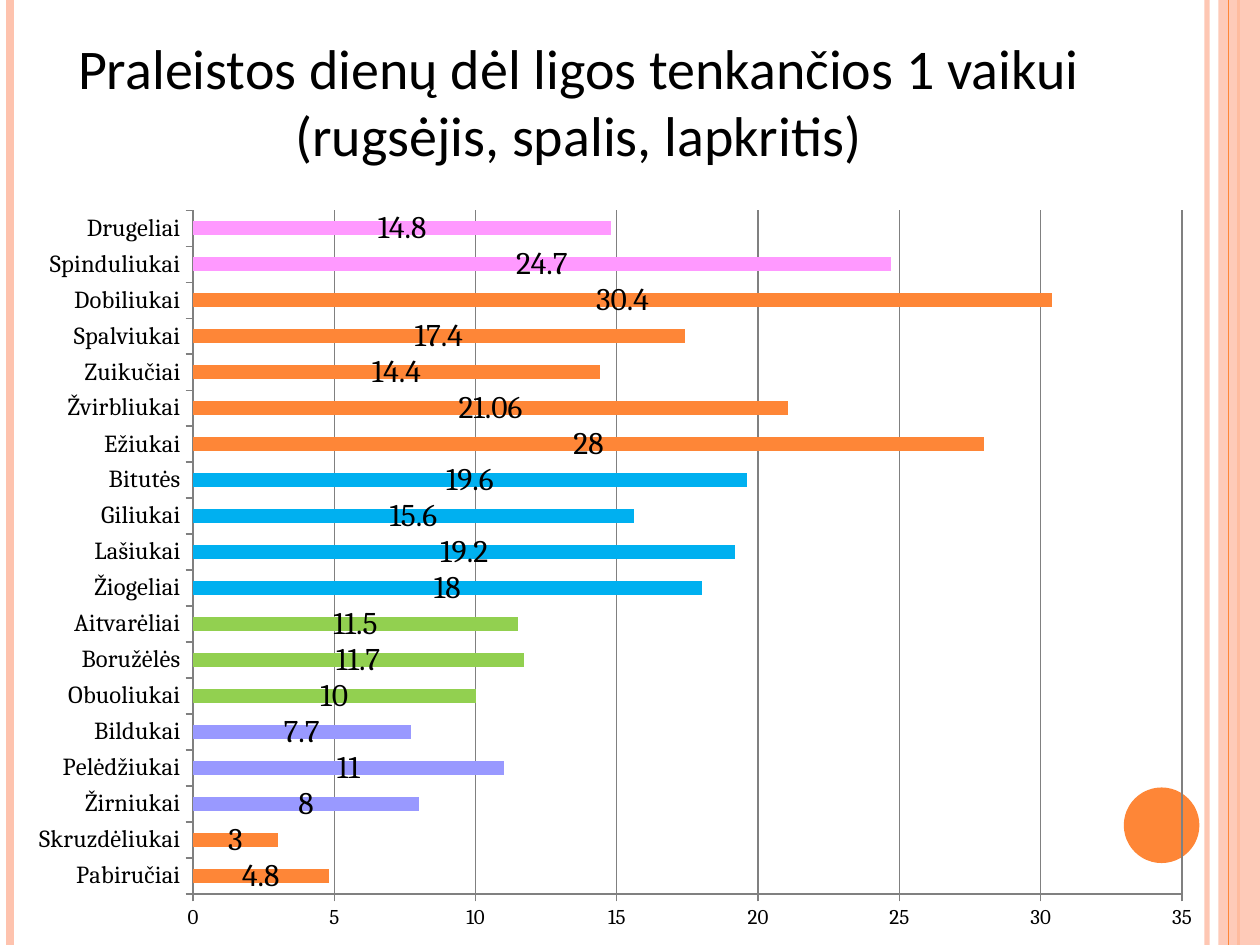
from lxml import etree
from pptx import Presentation
from pptx.chart.data import CategoryChartData
from pptx.dml.color import RGBColor
from pptx.enum.chart import XL_CHART_TYPE, XL_LABEL_POSITION, XL_TICK_MARK
from pptx.enum.shapes import MSO_CONNECTOR, MSO_SHAPE
from pptx.enum.text import MSO_ANCHOR, MSO_AUTO_SIZE, PP_ALIGN
from pptx.oxml.ns import qn
from pptx.util import Pt

BARS = XL_CHART_TYPE.BAR_STACKED
MID = XL_LABEL_POSITION.CENTER
OUT, NONE = XL_TICK_MARK.OUTSIDE, XL_TICK_MARK.NONE
LINE = MSO_CONNECTOR.STRAIGHT
RECT, OVAL = MSO_SHAPE.RECTANGLE, MSO_SHAPE.OVAL

# Content: groups from the bottom up, each with its bar colour
TITLE = "Praleistos dienų dėl ligos tenkančios 1 vaikui (rugsėjis, spalis, lapkritis)"
GROUPS = [
    ("orange", [("Pabiručiai", 4.8), ("Skruzdėliukai", 3)]),
    ("violet", [("Žirniukai", 8), ("Pelėdžiukai", 11), ("Bildukai", 7.7)]),
    ("green", [("Obuoliukai", 10), ("Boružėlės", 11.7), ("Aitvarėliai", 11.5)]),
    ("blue", [("Žiogeliai", 18), ("Lašiukai", 19.2), ("Giliukai", 15.6),
              ("Bitutės", 19.6)]),
    ("orange", [("Ežiukai", 28), ("Žvirbliukai", 21.06), ("Zuikučiai", 14.4),
                ("Spalviukai", 17.4), ("Dobiliukai", 30.4)]),
    ("pink", [("Spinduliukai", 24.7), ("Drugeliai", 14.8)]),
]

THEME = {
    "orange": "FE8637", "peach": "FEC3AE", "violet": "9999FF",
    "green": "92D050", "blue": "00B0F0", "pink": "FF99FF",
    "ink": "000000", "grid": "808080",
    "head": "Calibri", "body": "Cambria",
    "title": 32, "label": 18, "cat": 14, "val": 12,
}

# Places in points
WIDE, HIGH = 720, 540
TITLE_BOX = (36.7, 9.4, 588.2, 90)
CHART_BOX = (8.6, 111.6, 686.2, 428.4)
BAND = (696.2, 0, 23.8, HIGH)
DISC = (642.2, 450, 43.2, 43.2)
RULES = [  # x, colour, weight, opacity in percent
    (689.8, "peach", 3, 93),
    (5.8, "peach", 4.5, 100),
    (707.8, "orange", 1.5, 100),
]
EDGE = (702, "orange", 0.75, 100)


def color(name):
    return RGBColor.from_string(THEME[name])


def put(item, **vals):
    for key, val in vals.items():
        setattr(item, key, val)


def style(font, size, face="body"):
    put(font, size=Pt(THEME[size]), name=THEME[face], bold=False)
    font.color.rgb = color("ink")


def fade(part, pct):
    tint = next(part._element.spPr.iter(qn("a:srgbClr")))
    etree.SubElement(tint, qn("a:alpha"), val=str(pct * 1000))


def rule(shapes, x, tone, weight, pct):
    line = shapes.add_connector(LINE, Pt(x), Pt(0), Pt(x), Pt(HIGH))
    line.line.color.rgb = color(tone)
    line.line.width = Pt(weight)
    if pct < 100:
        fade(line, pct)
    etree.SubElement(line._element.spPr, qn("a:effectLst"))


def solid(shapes, kind, box, tone):
    shape = shapes.add_shape(kind, *map(Pt, box))
    shape.shadow.inherit = False
    shape.fill.solid()
    shape.fill.fore_color.rgb = color(tone)
    shape.line.fill.background()
    return shape


def draw_chart(shapes):
    rows = [(name, val, tone) for tone, group in GROUPS for name, val in group]
    data = CategoryChartData()
    data.categories = [name for name, _, _ in rows]
    data.add_series("Series 1", [val for _, val, _ in rows])
    chart = shapes.add_chart(BARS, *map(Pt, CHART_BOX), data).chart
    put(chart, has_legend=False, has_title=False)
    style(chart.font, "label")

    # Bars and their labels
    plot = chart.plots[0]
    put(plot, gap_width=150, overlap=100, vary_by_categories=False,
        has_data_labels=True)
    put(plot.data_labels, show_value=True, position=MID)
    style(plot.data_labels.font, "label")
    bars = plot.series[0]
    bars.format.fill.solid()
    bars.format.fill.fore_color.rgb = color("orange")
    for i, (_, _, tone) in enumerate(rows):
        if tone != "orange":
            fill = bars.points[i].format.fill
            fill.solid()
            fill.fore_color.rgb = color(tone)

    # Axes and grid
    cat, val = chart.category_axis, chart.value_axis
    put(cat, has_major_gridlines=False)
    put(val, has_major_gridlines=True, minimum_scale=0, maximum_scale=35,
        major_unit=5)
    for axis, size in ((cat, "cat"), (val, "val")):
        put(axis, major_tick_mark=OUT, minor_tick_mark=NONE)
        style(axis.tick_labels.font, size)
        axis.format.line.color.rgb = color("grid")
    val.major_gridlines.format.line.color.rgb = color("grid")


def main():
    deck = Presentation()
    put(deck, slide_width=Pt(WIDE), slide_height=Pt(HIGH))
    slide = deck.slides.add_slide(deck.slide_layouts[5])
    shapes = slide.shapes

    # Side stripes and disc
    for item in RULES:
        rule(shapes, *item)
    fade(solid(shapes, RECT, BAND, "peach"), 87)
    rule(shapes, *EDGE)
    solid(shapes, OVAL, DISC, "orange")

    # Title
    head = shapes.title
    put(head, **dict(zip(("left", "top", "width", "height"),
                         map(Pt, TITLE_BOX))))
    frame = head.text_frame
    frame.text = TITLE
    put(frame, word_wrap=True, auto_size=MSO_AUTO_SIZE.NONE,
        vertical_anchor=MSO_ANCHOR.BOTTOM)
    para = frame.paragraphs[0]
    para.alignment = PP_ALIGN.CENTER
    style(para.runs[0].font, "title", "head")

    draw_chart(shapes)
    deck.save("out.pptx")


if __name__ == "__main__":
    main()
